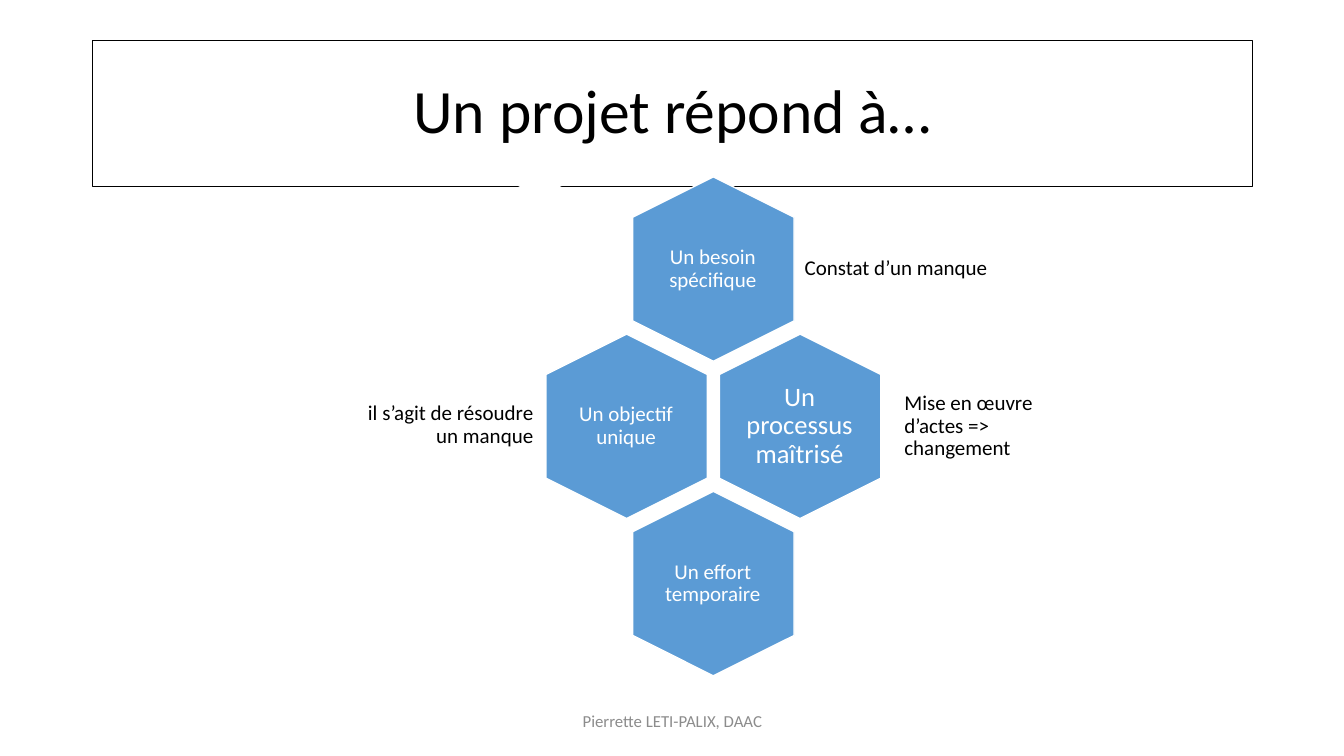
from pptx import Presentation
from pptx.dml.color import RGBColor
from pptx.enum.shapes import MSO_SHAPE
from pptx.enum.text import MSO_ANCHOR, MSO_AUTO_SIZE, PP_ALIGN
from pptx.util import Pt

PX = 9144  # EMU per px, at 100 px to the inch
BLACK, WHITE, BLUE, GREY = "000000", "FFFFFF", "5B9BD5", "8C8C8C"
LEFT, CENTER, RIGHT = PP_ALIGN.LEFT, PP_ALIGN.CENTER, PP_ALIGN.RIGHT

# Honeycomb: half-column and row steps between hexagon centres
ORIGIN_X, ORIGIN_Y = 535, 267
STEP_X, STEP_Y = 86, 156
HEXAGON_LENGTH, HEXAGON_WIDTH = 183, 160
LABEL_WIDTH, LABEL_HEIGHT = 110, 126


def color(value):
    return RGBColor.from_string(value)


def emu(*lengths):
    return [length * PX for length in lengths]


def write(shape, text, size=15, ink=BLACK, align=LEFT, margin=6, spacing=0.9):
    frame = shape.text_frame
    frame.word_wrap = True
    frame.auto_size = MSO_AUTO_SIZE.NONE
    frame.vertical_anchor = MSO_ANCHOR.MIDDLE
    frame.margin_left = frame.margin_right = margin * PX
    frame.margin_top = frame.margin_bottom = margin * PX
    paragraph = frame.paragraphs[0]
    paragraph.alignment = align
    paragraph.line_spacing = spacing
    run = paragraph.add_run()
    run.text = text
    run.font.name = "Calibri"
    run.font.size = Pt(size)
    run.font.color.rgb = color(ink)


class HoneycombSlide:
    def __init__(self, presentation):
        self.slide = presentation.slides.add_slide(presentation.slide_layouts[5])

    def paint(self, shape, fill, line):
        shape.fill.solid()
        shape.fill.fore_color.rgb = color(fill)
        shape.line.color.rgb = color(line)
        shape.line.width = Pt(1)

    def title(self, text, left, top, width, height):
        shape = self.slide.shapes.title
        shape.left, shape.top, shape.width, shape.height = emu(left, top, width, height)
        self.paint(shape, WHITE, BLACK)
        write(shape, text, size=44, align=CENTER)

    def text(self, text, left, top, width, height, **style):
        box = self.slide.shapes.add_textbox(*emu(left, top, width, height))
        write(box, text, **style)

    def hexagon(self, column, row, fill=BLUE, label=None, **style):
        """Place an upright hexagon by its half-column and row in the honeycomb."""
        x, y = ORIGIN_X + column * STEP_X, ORIGIN_Y + row * STEP_Y
        shape = self.slide.shapes.add_shape(
            MSO_SHAPE.HEXAGON,
            *emu(x - HEXAGON_LENGTH // 2, y - HEXAGON_WIDTH // 2,
                 HEXAGON_LENGTH, HEXAGON_WIDTH))
        shape.rotation = 90
        shape.adjustments[0] = 0.25
        shape.shadow.inherit = False
        self.paint(shape, fill, WHITE)
        if label:
            self.text(label, x - LABEL_WIDTH // 2, y - LABEL_HEIGHT // 2,
                      LABEL_WIDTH, LABEL_HEIGHT, ink=WHITE, align=CENTER, **style)


def main():
    presentation = Presentation()
    presentation.slide_width, presentation.slide_height = emu(1333, 750)
    page = HoneycombSlide(presentation)

    page.title("Un projet répond à…", 92, 40, 1150, 145)

    page.hexagon(2, 0, label="Un besoin spécifique")
    page.hexagon(0, 0, fill=WHITE)
    page.hexagon(1, 1, label="Un objectif unique")
    page.hexagon(3, 1, label="Un processus maîtrisé", size=19, margin=0)
    page.hexagon(2, 2, label="Un effort temporaire")

    page.text("Constat d’un manque", 792, 212, 205, 110)
    page.text("il s’agit de résoudre un manque", 337, 367, 198, 110, align=RIGHT)
    page.text("Mise en œuvre d’actes => changement", 891, 368, 140, 110)
    page.text("Pierrette LETI-PALIX, DAAC", 442, 695, 450, 40,
              size=12, ink=GREY, align=CENTER, spacing=1.0)

    presentation.save("out.pptx")


if __name__ == "__main__":
    main()
